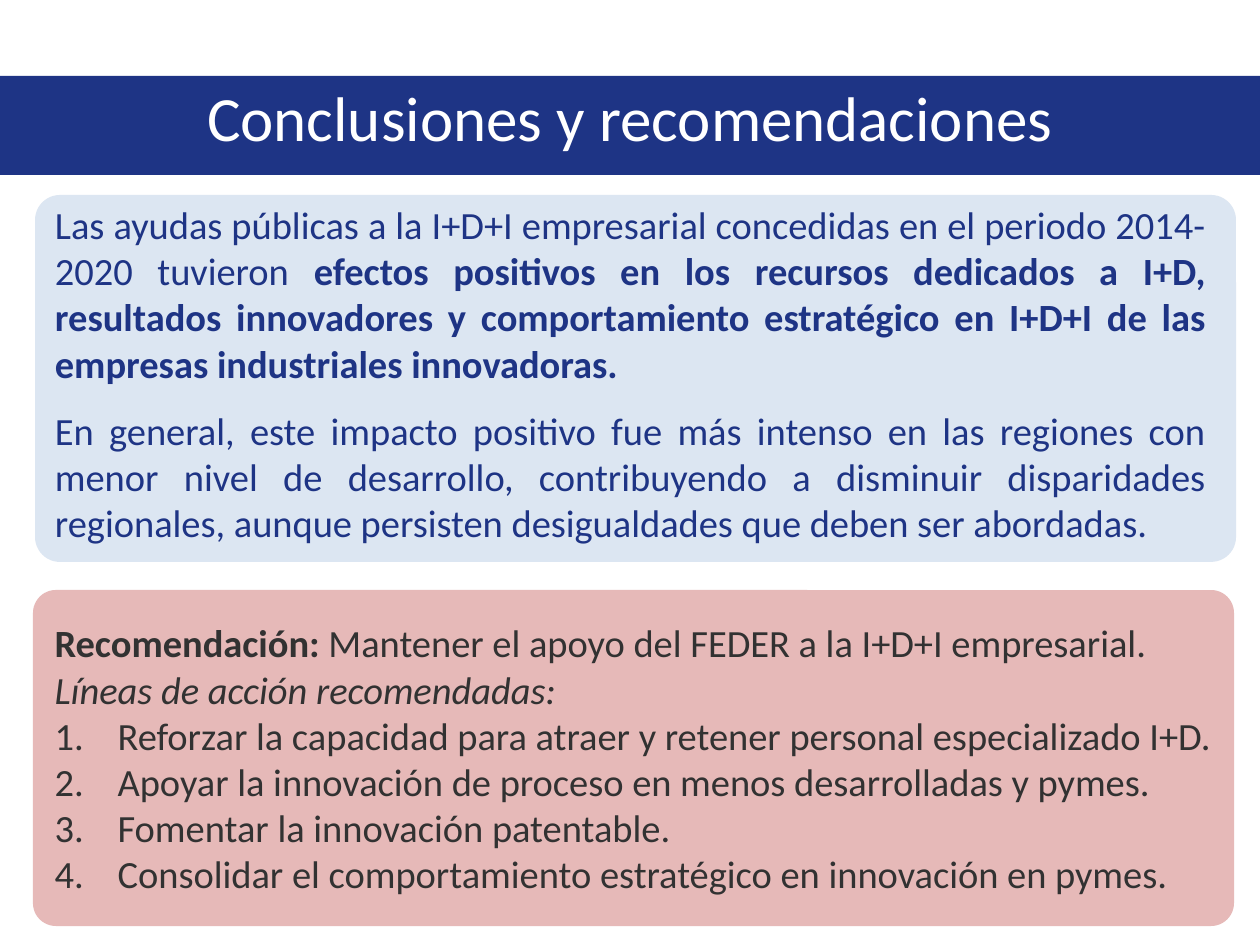
from dataclasses import dataclass

import pptx
import pptx.dml.color
import pptx.enum.shapes
import pptx.enum.text
import pptx.oxml.ns
import pptx.util
from lxml import etree

RGB = pptx.dml.color.RGBColor
SHAPE = pptx.enum.shapes.MSO_SHAPE
ALIGN = pptx.enum.text.PP_ALIGN
ANCHOR = pptx.enum.text.MSO_ANCHOR

NAVY = RGB(0x1E, 0x34, 0x85)
PALE = RGB(0xDC, 0xE6, 0xF2)
ROSE = RGB(0xE6, 0xB9, 0xB8)
GRAY = RGB(0x32, 0x32, 0x32)
WHITE = RGB(0xFF, 0xFF, 0xFF)
FONT = "Calibri"
SCALE = 914400 / 126
ROUND = 0.068


@dataclass(frozen=True)
class Box:
    left: int
    top: int
    width: int
    height: int


@dataclass(frozen=True)
class Run:
    text: str
    bold: bool = False
    slant: bool = False


@dataclass(frozen=True)
class Para:
    runs: tuple[Run, ...]
    align: ALIGN = ALIGN.LEFT
    before: int = 0
    count: bool = False


def emu(px: int) -> pptx.util.Emu:
    return pptx.util.Emu(round(px * SCALE))


def place(box: Box) -> tuple[pptx.util.Emu, ...]:
    return emu(box.left), emu(box.top), emu(box.width), emu(box.height)


def add_panel(slide, kind: SHAPE, box: Box, fill: RGB):
    panel = slide.shapes.add_shape(kind, *place(box))
    panel.shadow.inherit = False
    panel.fill.solid()
    panel.fill.fore_color.rgb = fill
    panel.line.fill.background()
    if kind == SHAPE.ROUNDED_RECTANGLE:
        panel.adjustments[0] = ROUND
    return panel


def set_frame(frame, pads: tuple[int, int, int, int], anchor: ANCHOR) -> None:
    frame.word_wrap = True
    frame.auto_size = pptx.enum.text.MSO_AUTO_SIZE.NONE
    frame.vertical_anchor = anchor
    (frame.margin_left, frame.margin_top,
     frame.margin_right, frame.margin_bottom) = map(emu, pads)


def add_count(line) -> None:
    props = line._p.get_or_add_pPr()
    props.set("marL", str(emu(63)))
    props.set("indent", str(-emu(63)))
    mark = etree.SubElement(props, pptx.oxml.ns.qn("a:buAutoNum"))
    mark.set("type", "arabicPeriod")


def write(frame, paras: list[Para], size: int, color: RGB) -> None:
    for index, para in enumerate(paras):
        line = frame.add_paragraph() if index else frame.paragraphs[0]
        line.alignment = para.align
        if para.before:
            line.space_before = pptx.util.Pt(para.before)
        if para.count:
            add_count(line)
        for part in para.runs:
            run = line.add_run()
            run.text = part.text
            run.font.name = FONT
            run.font.size = pptx.util.Pt(size)
            run.font.bold = part.bold
            run.font.italic = part.slant
            run.font.color.rgb = color


FINDINGS = [
    Para((
        Run("Las ayudas públicas a la I+D+I empresarial concedidas en el "
            "periodo 2014-2020 tuvieron "),
        Run("efectos positivos en los recursos dedicados a I+D, resultados "
            "innovadores y comportamiento estratégico en I+D+I de las "
            "empresas industriales innovadoras. ", bold=True),
    ), ALIGN.JUSTIFY),
    Para((
        Run("En general, este impacto positivo fue más intenso en las "
            "regiones con menor nivel de desarrollo, contribuyendo a "
            "disminuir disparidades regionales, aunque persisten "
            "desigualdades que deben ser abordadas."),
    ), ALIGN.JUSTIFY, before=12),
]
ACTIONS = [
    "Reforzar la capacidad para atraer y retener personal especializado I+D.",
    "Apoyar la innovación de proceso en menos desarrolladas y pymes.",
    "Fomentar la innovación patentable.",
    "Consolidar el comportamiento estratégico en innovación en pymes.",
]
ADVICE = [
    Para((Run("Recomendación: ", bold=True),
          Run("Mantener el apoyo del FEDER a la I+D+I empresarial."))),
    Para((Run("Líneas de acción recomendadas:", slant=True),)),
    *(Para((Run(text),), count=True) for text in ACTIONS),
]


def main() -> None:
    deck = pptx.Presentation()
    deck.slide_width, deck.slide_height = emu(1260), emu(945)
    slide = deck.slides.add_slide(deck.slide_layouts[5])

    add_panel(slide, SHAPE.RECTANGLE, Box(0, 76, 1260, 99), NAVY)
    add_panel(slide, SHAPE.ROUNDED_RECTANGLE, Box(35, 195, 1201, 367), PALE)

    title = slide.shapes.title
    title.element.getparent().append(title.element)
    title.left, title.top, title.width, title.height = place(
        Box(63, 38, 1134, 157))
    set_frame(title.text_frame, (13, 6, 13, 6), ANCHOR.MIDDLE)
    head = Para((Run("Conclusiones y recomendaciones"),), ALIGN.CENTER)
    write(title.text_frame, [head], 36, WHITE)

    body = slide.shapes.add_textbox(*place(Box(25, 186, 1211, 336)))
    set_frame(body.text_frame, (30, 15, 30, 15), ANCHOR.TOP)
    write(body.text_frame, FINDINGS, 22, NAVY)

    panel = add_panel(
        slide, SHAPE.ROUNDED_RECTANGLE, Box(33, 590, 1201, 336), ROSE)
    set_frame(panel.text_frame, (15, 10, 13, 10), ANCHOR.MIDDLE)
    write(panel.text_frame, ADVICE, 22, GRAY)

    deck.save("out.pptx")


if __name__ == "__main__":
    main()
